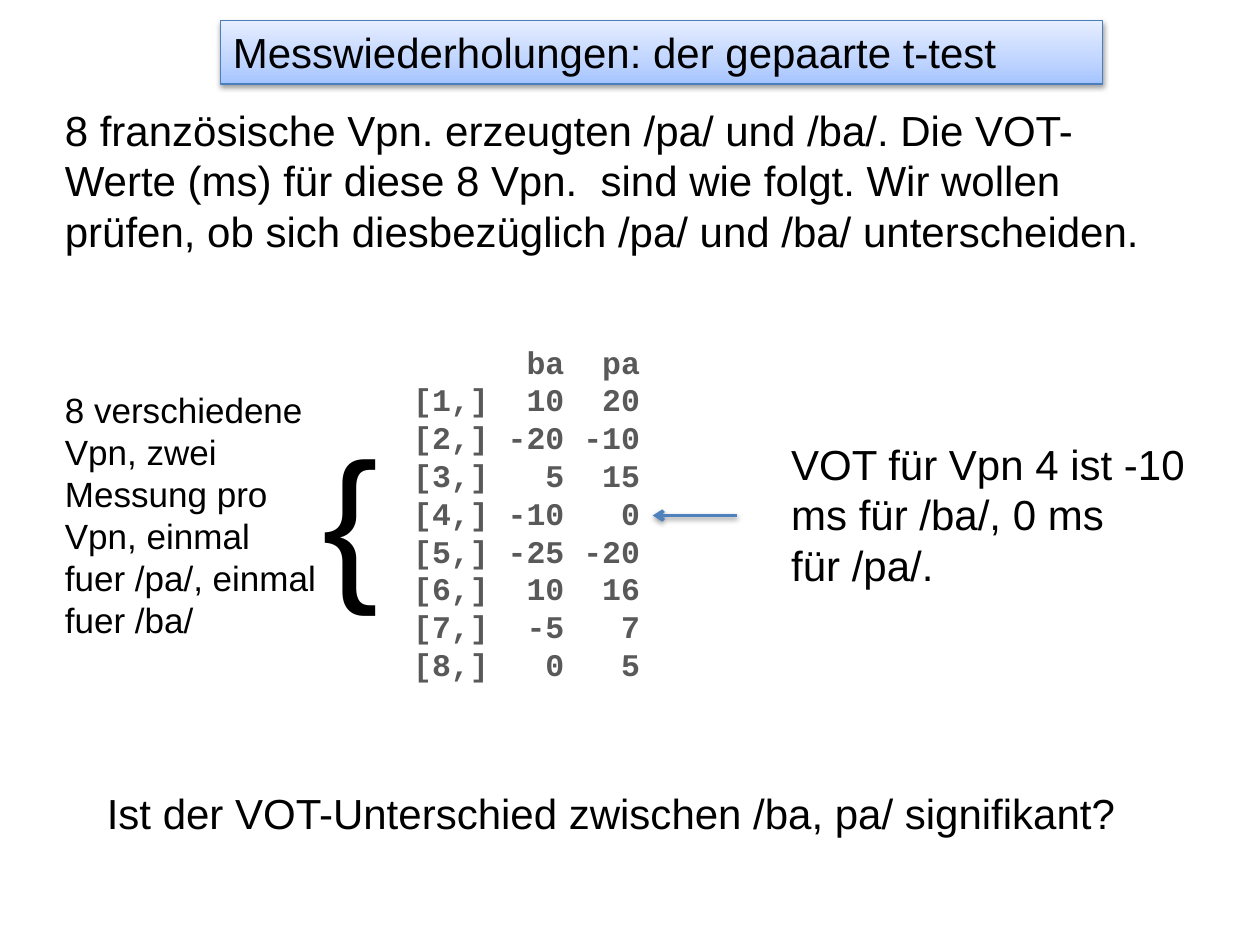
from copy import deepcopy
from dataclasses import dataclass

from lxml.etree import SubElement
from pptx import Presentation
from pptx.dml.color import RGBColor
from pptx.enum.shapes import MSO_CONNECTOR, MSO_SHAPE
from pptx.enum.text import MSO_ANCHOR, MSO_AUTO_SIZE, PP_ALIGN
from pptx.oxml.ns import qn
from pptx.util import Pt

BLACK = RGBColor(0x00, 0x00, 0x00)
GRAY = RGBColor(0x59, 0x59, 0x59)
ARROW_BLUE = RGBColor(0x4F, 0x81, 0xBD)
BORDER_BLUE = RGBColor(0x4B, 0x7E, 0xBC)
TITLE_GRADIENT = (
    (0, RGBColor(0xA4, 0xC4, 0xFF)),
    (0.35, RGBColor(0xBF, 0xD4, 0xFF)),
    (1, RGBColor(0xE6, 0xEE, 0xFF)),
)


@dataclass(frozen=True)
class Box:
    left: float
    top: float
    width: float
    height: float

    def lengths(self) -> tuple:
        return Pt(self.left), Pt(self.top), Pt(self.width), Pt(self.height)


@dataclass(frozen=True)
class Measurement:
    ba: int
    pa: int


MEASUREMENTS = (
    Measurement(10, 20),
    Measurement(-20, -10),
    Measurement(5, 15),
    Measurement(-10, 0),
    Measurement(-25, -20),
    Measurement(10, 16),
    Measurement(-5, 7),
    Measurement(0, 5),
)


def write_text(shape, text: str, *, size: float = 24, font: str = "Arial",
               color: RGBColor = BLACK, bold: bool = False, wrap: bool = True) -> None:
    frame = shape.text_frame
    frame.word_wrap = wrap
    frame.auto_size = MSO_AUTO_SIZE.SHAPE_TO_FIT_TEXT
    frame.vertical_anchor = MSO_ANCHOR.TOP
    frame.text = text
    for paragraph in frame.paragraphs:
        paragraph.alignment = PP_ALIGN.LEFT
        for run in paragraph.runs:
            run.font.size = Pt(size)
            run.font.name = font
            run.font.bold = bold
            run.font.color.rgb = color


def add_text(slide, box: Box, text: str, **text_format) -> None:
    write_text(slide.shapes.add_textbox(*box.lengths()), text, **text_format)


def add_shadow(properties) -> None:
    effects = properties.find(qn("a:effectLst"))
    if effects is None:
        effects = SubElement(properties, qn("a:effectLst"))
    shadow = SubElement(effects, qn("a:outerShdw"), blurRad=str(Pt(3.1)),
                        dist=str(Pt(1.6)), dir="5400000", rotWithShape="0")
    color = SubElement(shadow, qn("a:srgbClr"), val=str(BLACK))
    SubElement(color, qn("a:alpha"), val="38000")


def add_title(slide, box: Box, text: str) -> None:
    shape = slide.shapes.add_shape(MSO_SHAPE.RECTANGLE, *box.lengths())
    shape.fill.gradient()
    shape.fill.gradient_angle = 90
    stop_list = shape.element.spPr.find(qn("a:gradFill")).find(qn("a:gsLst"))
    stop_list.append(deepcopy(stop_list[0]))
    for stop, (position, color) in zip(shape.fill.gradient_stops, TITLE_GRADIENT):
        stop.position = position
        stop.color.rgb = color
    shape.line.color.rgb = BORDER_BLUE
    shape.line.width = Pt(0.75)
    shape.shadow.inherit = False
    add_shadow(shape.element.spPr)
    write_text(shape, text)


def add_arrow(slide, start: float, end: float, height: float) -> None:
    arrow = slide.shapes.add_connector(
        MSO_CONNECTOR.STRAIGHT, Pt(start), Pt(height), Pt(end), Pt(height))
    arrow.line.color.rgb = ARROW_BLUE
    arrow.line.width = Pt(2)
    properties = arrow.element.spPr
    SubElement(properties.find(qn("a:ln")), qn("a:tailEnd"), type="arrow")
    add_shadow(properties)


def console_output() -> str:
    header = f"{'ba':>8}{'pa':>4}"
    rows = [f"[{number},]{value.ba:>4}{value.pa:>4}"
            for number, value in enumerate(MEASUREMENTS, start=1)]
    return "\n".join([header, *rows])


def main() -> None:
    presentation = Presentation()
    presentation.slide_width = Pt(720)
    presentation.slide_height = Pt(540)
    slide = presentation.slides.add_slide(presentation.slide_layouts[6])

    add_title(slide, Box(126, 11.7, 504, 36.35), "Messwiederholungen: der gepaarte t-test")
    add_text(slide, Box(30, 56.25, 648, 94.5),
             "8 französische Vpn. erzeugten /pa/ und /ba/. Die VOT-Werte (ms) für diese "
             "8 Vpn.  sind wie folgt. Wir wollen prüfen, ob sich diesbezüglich /pa/ und "
             "/ba/ unterscheiden.")
    add_text(slide, Box(445, 247, 240, 94.5),
             "VOT für Vpn 4 ist -10 ms für /ba/, 0 ms für /pa/.")
    add_arrow(slide, 421.2, 373, 294.6)
    add_text(slide, Box(229, 192.25, 162, 203.6), console_output(),
             size=18, font="Courier New", color=GRAY, bold=True)
    add_text(slide, Box(54, 446.4, 606, 36.35),
             "Ist der VOT-Unterschied zwischen /ba, pa/ signifikant?")
    add_text(slide, Box(177.1, 232.6, 46.8, 123.8), "{", size=96, wrap=False)
    add_text(slide, Box(30, 218.2, 159, 152.6),
             "8 verschiedene Vpn, zwei Messung pro Vpn, einmal fuer /pa/, einmal fuer /ba/",
             size=20)

    presentation.save("out.pptx")


if __name__ == "__main__":
    main()
